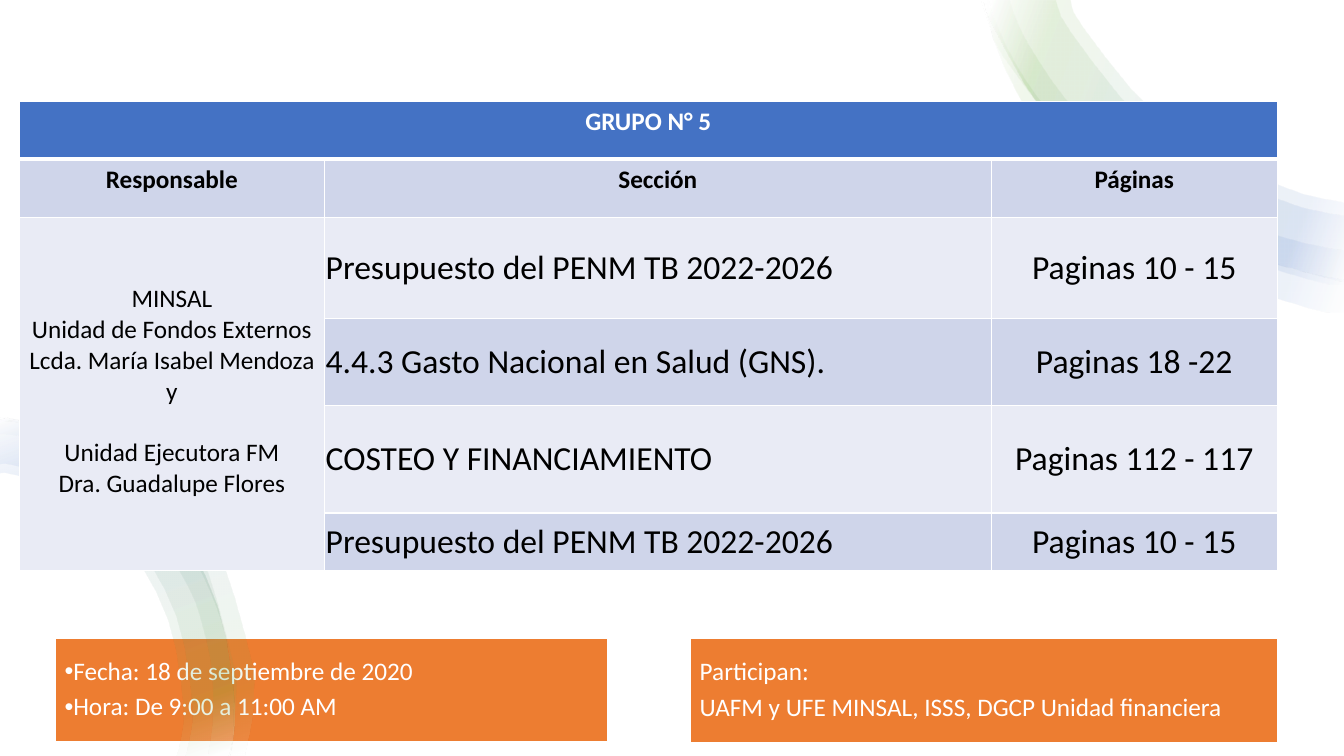
from collections import namedtuple

from lxml.etree import SubElement
from pptx import Presentation
from pptx.dml.color import RGBColor
from pptx.enum.shapes import MSO_SHAPE as Preset
from pptx.enum.text import MSO_ANCHOR as Anchor, MSO_AUTO_SIZE as AutoSize, PP_ALIGN as Align
from pptx.oxml.ns import qn
from pptx.util import Inches, Pt

Box = namedtuple("Box", "left top width height")

COLORS = {"white": "FFFFFF", "black": "000000", "orange": "ED7D31", "blue": "4472C4",
          "green": "70AD47", "band_dark": "CFD5EA", "band_light": "E9EBF5"}
FONT = "Calibri"

# Ribbons: each is an outer edge and the inner edge leading back, in inches inside its box
LEFT_OUTER = [(0, 0.17), (0.19, 0.18), (1.02, 0.5), (1.7, 1.15), (2.15, 2.02), (2.32, 2.99), (2.27, 3.5)]
LEFT_RIBBONS = [
    (LEFT_OUTER, [(1.74, 3.5), (1.78, 3.36), (1.81, 2.99), (1.66, 2.15), (1.24, 1.4), (0.64, 0.88),
                  (0.12, 0.71), (0, 0.7)]),
    (LEFT_OUTER, [(1.83, 3.5), (1.86, 3.38), (1.9, 2.99), (1.74, 2.11), (1.3, 1.34), (0.68, 0.8),
                  (0.13, 0.62), (0, 0.61)]),
    ([(0, 0.17), (0.18, 0.18), (0.4, 0.21), (0.83, 0.36), (1.56, 0.92), (1.84, 1.29), (2.07, 1.7),
      (2.32, 2.62), (2.34, 2.86), (2.31, 3.34), (2.28, 3.5)],
     [(2.06, 3.5), (2.09, 3.31), (2.11, 3.09), (2.1, 2.65), (2.01, 2.22), (1.86, 1.81), (1.41, 1.07),
      (1.1, 0.77), (0.75, 0.53), (0.36, 0.37), (0.16, 0.32), (0, 0.31)]),
    ([(0, 0.15), (0.13, 0.16), (0.81, 0.33), (1.23, 0.55), (1.61, 0.84), (1.95, 1.2), (2.22, 1.62),
      (2.5, 2.6), (2.51, 2.85), (2.5, 3.11), (2.42, 3.5)],
     [(2.26, 3.5), (2.3, 3.33), (2.31, 3.09), (2.29, 2.62), (2.19, 2.17), (2.02, 1.74), (1.79, 1.33),
      (1.5, 0.96), (1.17, 0.64), (0.78, 0.39), (0.57, 0.3), (0.35, 0.23), (0.12, 0.19), (0, 0.18)]),
]
RIGHT_OUTER = [(0.77, 0), (0.85, 0.25), (1.38, 1.15), (2.16, 1.89), (3.12, 2.44), (4.2, 2.76), (4.33, 2.78)]
RIGHT_RIBBONS = [
    ([(0.74, 0.01), (0.91, 0.53), (1.06, 0.86), (1.24, 1.17), (1.69, 1.76), (1.95, 2.02), (2.24, 2.27),
      (2.88, 2.67), (3.96, 3.05), (4.33, 3.1)],
     [(4.33, 2.77), (4.04, 2.72), (3.7, 2.63), (3.37, 2.51), (3.04, 2.37), (2.43, 2.02), (2.14, 1.82),
      (1.87, 1.59), (1.39, 1.08), (1.18, 0.8), (1, 0.49), (0.86, 0.17), (0.81, 0.01)]),
    (RIGHT_OUTER, [(4.33, 2), (4.3, 2), (3.67, 1.83), (2.53, 1.19), (1.75, 0.28), (1.62, 0)]),
    ([(0.76, 0.01), (0.83, 0.25), (0.96, 0.57), (1.81, 1.67), (2.37, 2.11), (2.99, 2.45), (4.03, 2.78),
      (4.33, 2.82)],
     [(4.33, 2.48), (4.1, 2.44), (3.77, 2.36), (3.15, 2.14), (2.03, 1.44), (1.57, 0.98), (1.21, 0.45),
      (1.07, 0.16), (1.02, 0.01)]),
    (RIGHT_OUTER, [(4.33, 2.13), (4.28, 2.13), (3.62, 1.95), (2.44, 1.29), (1.63, 0.33), (1.48, 0.01)]),
]

# Table wording
HEADINGS = ["Responsable", "Sección", "Páginas"]
RESPONSIBLE = ["MINSAL", "Unidad de Fondos Externos", "Lcda. María Isabel Mendoza y",
               "Unidad Ejecutora FM", "Dra. Guadalupe Flores"]
SECTIONS = [("Presupuesto del PENM TB 2022-2026", "Paginas 10 - 15"),
            ("4.4.3 Gasto Nacional en Salud (GNS).", "Paginas 18 -22"),
            ("COSTEO Y FINANCIAMIENTO", "Paginas 112 - 117"),
            ("Presupuesto del PENM TB 2022-2026", "Paginas 10 - 15")]
COLUMN_WIDTHS = [3.03, 6.61, 2.84]
ROW_HEIGHTS = [0.57, 0.58, 1, 0.86, 1.07, 0.57]


def rgb(name):
    return RGBColor.from_string(COLORS[name])


def write_text(frame, lines, size=18, color="black", bold=False, align=Align.LEFT):
    for index, line in enumerate(lines):
        para = frame.paragraphs[0] if index == 0 else frame.add_paragraph()
        para.alignment = align
        span = para.add_run()
        span.text = line
        span.font.name, span.font.size, span.font.bold = FONT, Pt(size), bold
        span.font.color.rgb = rgb(color)
    return frame.paragraphs


def smooth(edge, steps=3):
    """Catmull-Rom curve through the points of an edge."""
    padded = [edge[0], *edge, edge[-1]]
    points = []
    for before, start, end, after in zip(padded, padded[1:], padded[2:], padded[3:]):
        for step in range(steps):
            t = step / steps
            points.append(tuple(
                b + 0.5 * t * (c - a + t * (2 * a - 5 * b + 4 * c - d + t * (3 * (b - c) + d - a)))
                for a, b, c, d in zip(before, start, end, after)))
    return points + [edge[-1]]


def fill_gradient(shape, angle):
    shape.fill.background()
    gradient = shape._element.spPr.find(qn("a:noFill"))
    gradient.tag = qn("a:gradFill")
    stops = SubElement(gradient, qn("a:gsLst"))
    for position, name in [(2, "white"), (16, "green"), (85, "blue"), (100, "white")]:
        stop = SubElement(stops, qn("a:gs"), pos=str(position * 1000))
        color = SubElement(stop, qn("a:srgbClr"), val=COLORS[name])
        SubElement(color, qn("a:alpha"), val="10000")
    SubElement(gradient, qn("a:lin"), ang=str(angle * 60000), scaled="0")


def add_backdrop(page, box):
    backdrop = page.shapes.add_shape(Preset.RECTANGLE, *map(Inches, box))
    backdrop.shadow.inherit = False
    backdrop.fill.solid()
    backdrop.fill.fore_color.rgb = rgb("white")
    backdrop.line.fill.background()
    page.shapes._spTree.insert(2, backdrop._element)  # behind the placeholders


def add_ribbons(page, box, ribbons, angle):
    for outer, inner in ribbons:
        points = [(Inches(box.left + x), Inches(box.top + y)) for x, y in smooth(outer) + smooth(inner)]
        builder = page.shapes.build_freeform(*points[0])
        builder.add_line_segments(points[1:], close=True)
        shape = builder.convert_to_shape()
        shape.shadow.inherit = False
        shape.line.fill.background()
        fill_gradient(shape, angle)


def fill_note(holder, box, lines, bullet=None):
    holder.left, holder.top, holder.width, holder.height = map(Inches, box)
    holder.fill.solid()
    holder.fill.fore_color.rgb = rgb("orange")
    holder.line.color.rgb = rgb("white")
    holder.line.width = Pt(1.5)
    frame = holder.text_frame
    frame.word_wrap = True
    frame.auto_size = AutoSize.NONE
    frame.vertical_anchor = Anchor.MIDDLE
    for para in write_text(frame, lines, color="white"):
        para.line_spacing, para.space_before, para.space_after = 0.9, Pt(0), Pt(6)
        properties = para._p.get_or_add_pPr()
        properties.set("marL", "0")
        properties.set("indent", str(Inches(-0.25) if bullet else 0))
        if bullet:
            SubElement(properties, qn("a:buChar"), char=bullet)
        else:
            SubElement(properties, qn("a:buNone"))


def style_cell(cell, fill, bottom=1):
    properties = cell._tc.get_or_add_tcPr()
    for side, width in [("L", 1), ("R", 1), ("T", 1), ("B", bottom)]:
        border = SubElement(properties, qn(f"a:ln{side}"), w=str(Pt(width)))
        solid = SubElement(border, qn("a:solidFill"))
        SubElement(solid, qn("a:srgbClr"), val=COLORS["white"])
    cell.fill.solid()
    cell.fill.fore_color.rgb = rgb(fill)


def add_group_table(page, box):
    table = page.shapes.add_table(len(ROW_HEIGHTS), len(COLUMN_WIDTHS), *map(Inches, box)).table
    for column, width in zip(table.columns, COLUMN_WIDTHS):
        column.width = Inches(width)
    for index, (row, height) in enumerate(zip(table.rows, ROW_HEIGHTS)):
        row.height = Inches(height)
        fill = "blue" if index == 0 else "band_dark" if index % 2 else "band_light"
        for cell in row.cells:
            style_cell(cell, fill, bottom=3 if index == 0 else 1)

    # Headings
    table.cell(0, 0).merge(table.cell(0, 2))
    write_text(table.cell(0, 0).text_frame, ["GRUPO N° 5"], color="white", bold=True, align=Align.CENTER)
    for column, heading in enumerate(HEADINGS):
        write_text(table.cell(1, column).text_frame, [heading], bold=True, align=Align.CENTER)

    # People in charge
    people = table.cell(2, 0)
    people.merge(table.cell(5, 0))
    people.margin_left = people.margin_right = Inches(0.08)
    people.margin_bottom = Inches(0.1)
    people.vertical_anchor = Anchor.MIDDLE
    paras = write_text(people.text_frame, RESPONSIBLE, align=Align.CENTER)
    paras[3].space_before = Pt(22)

    # Sections and pages
    for row, texts in enumerate(SECTIONS, start=2):
        for column, (text, align) in enumerate(zip(texts, (Align.LEFT, Align.CENTER)), start=1):
            cell = table.cell(row, column)
            cell.margin_left = cell.margin_right = cell.margin_top = Inches(0.01)
            cell.margin_bottom = 0
            cell.vertical_anchor = Anchor.MIDDLE
            write_text(cell.text_frame, [text], size=24, align=align)


def build_group_page(deck):
    page = deck.slides.add_slide(deck.slide_layouts[3])
    title, schedule, participants = page.placeholders
    title._element.getparent().remove(title._element)
    add_backdrop(page, Box(0, 0, 13.33, 7.5))
    fill_note(schedule, Box(0.54, 6.33, 5.49, 1.03),
              ["Fecha: 18 de septiembre de 2020", "Hora: De 9:00 a 11:00 AM"], bullet="•")
    fill_note(participants, Box(6.84, 6.33, 5.84, 1.04),
              ["Participan:", "UAFM y UFE MINSAL, ISSS, DGCP Unidad financiera"])
    add_ribbons(page, Box(0, 4, 2.6, 3.5), LEFT_RIBBONS, angle=250)
    add_ribbons(page, Box(9, 0, 4.33, 3.1), RIGHT_RIBBONS, angle=20)
    add_group_table(page, Box(0.19, 1.01, sum(COLUMN_WIDTHS), sum(ROW_HEIGHTS)))


def main():
    deck = Presentation()
    deck.slide_width, deck.slide_height = Inches(13.33), Inches(7.5)
    build_group_page(deck)
    deck.save("out.pptx")


if __name__ == "__main__":
    main()
